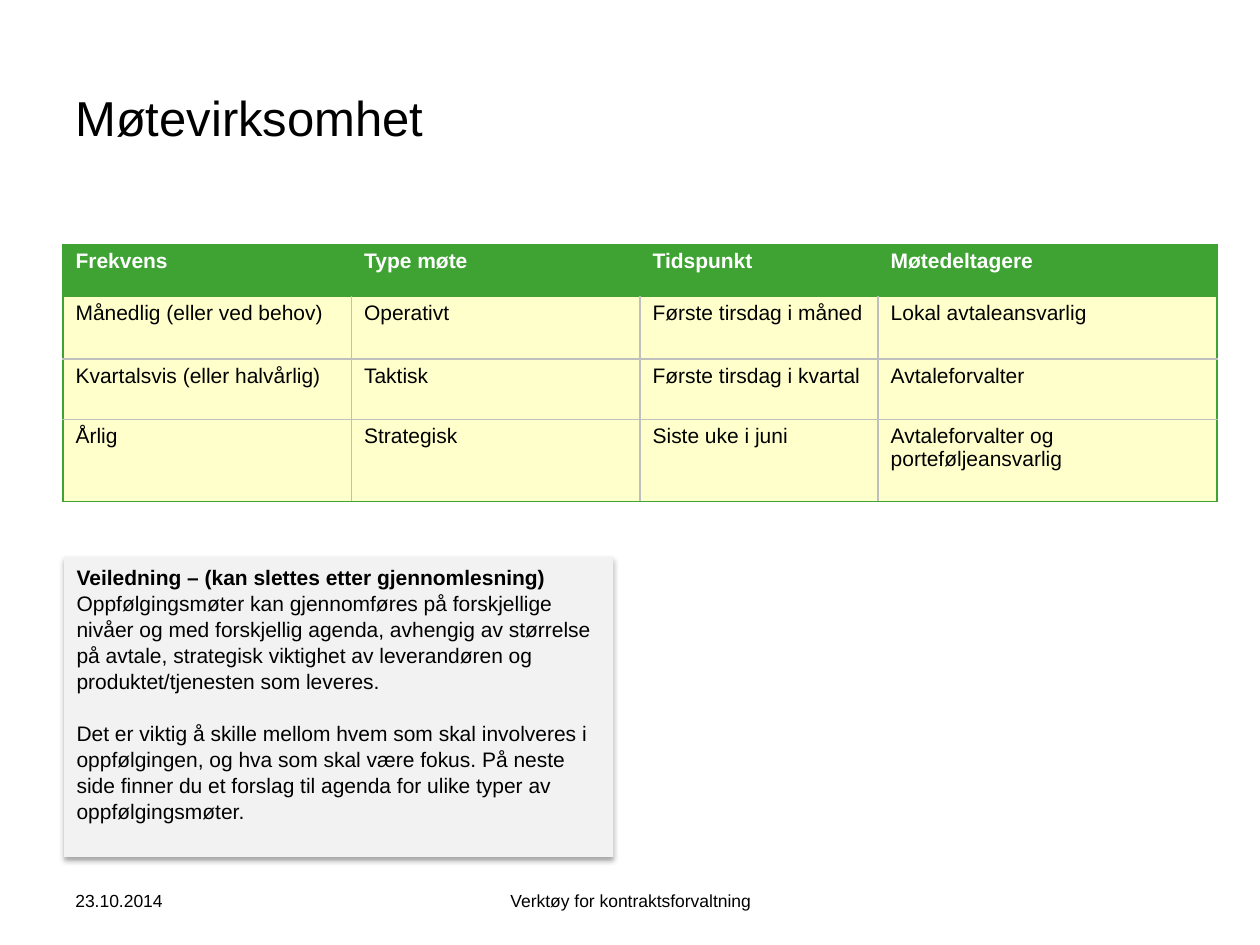
from lxml import etree
from pptx import Presentation
from pptx.dml.color import RGBColor
from pptx.enum.shapes import MSO_SHAPE
from pptx.enum.text import MSO_ANCHOR, PP_ALIGN
from pptx.oxml.ns import qn
from pptx.util import Inches, Pt

RECTANGLE = MSO_SHAPE.RECTANGLE
TOP, MIDDLE = MSO_ANCHOR.TOP, MSO_ANCHOR.MIDDLE
LEFT, CENTER = PP_ALIGN.LEFT, PP_ALIGN.CENTER

COLORS = {
    "text": "000000",
    "header_text": "FFFFFF",
    "green": "3EA333",
    "cream": "FFFFCC",
    "grid": "BFBFBF",
    "panel": "F2F2F2",
}
COLUMNS, ROWS = 10, 7.5
MEETINGS = [
    ["Frekvens", "Type møte", "Tidspunkt", "Møtedeltagere"],
    ["Månedlig (eller ved behov)", "Operativt", "Første tirsdag i måned", "Lokal avtaleansvarlig"],
    ["Kvartalsvis (eller halvårlig)", "Taktisk", "Første tirsdag i kvartal", "Avtaleforvalter"],
    ["Årlig", "Strategisk", "Siste uke i juni", "Avtaleforvalter og porteføljeansvarlig"],
]
GUIDANCE = [
    ("Veiledning – (kan slettes etter gjennomlesning)", {"bold": True}),
    ("Oppfølgingsmøter kan gjennomføres på forskjellige nivåer og med forskjellig agenda, "
     "avhengig av størrelse på avtale, strategisk viktighet av leverandøren og "
     "produktet/tjenesten som leveres.", {}),
    ("Det er viktig å skille mellom hvem som skal involveres i oppfølgingen, og hva som skal "
     "være fokus. På neste side finner du et forslag til agenda for ulike typer av "
     "oppfølgingsmøter.", {"before": 14.4}),
]


def rgb(name):
    return RGBColor.from_string(COLORS[name])


def write(para, text, size=12, color="text", bold=False, align=LEFT, before=0, spacing=1):
    para.alignment = align
    para.space_before = Pt(before)
    para.line_spacing = spacing
    span = para.add_run()
    span.text = text
    span.font.name = "Arial"
    span.font.size = Pt(size)
    span.font.bold = bold
    span.font.color.rgb = rgb(color)


def add_color(parent, name):
    return etree.SubElement(parent, qn("a:srgbClr"), val=COLORS[name])


def add_border(cell, side, name, width):
    line = etree.Element(qn(f"a:ln{side}"), w=str(Pt(width)))
    add_color(etree.SubElement(line, qn("a:solidFill")), name)
    return line


class SlideBuilder:
    def __init__(self, deck):
        self.column = deck.slide_width / COLUMNS
        self.row = deck.slide_height / ROWS
        self.page = deck.slides.add_slide(deck.slide_layouts[6])

    def place(self, left, top, width, height):
        return [round(value * unit) for value, unit in
                zip((left, top, width, height), (self.column, self.row) * 2)]

    def label(self, text, area, **style):
        box = self.page.shapes.add_textbox(*self.place(*area))
        frame = box.text_frame
        frame.word_wrap = True
        frame.vertical_anchor = MIDDLE
        write(frame.paragraphs[0], text, **style)

    def table(self, cells, left, top, widths, heights):
        area = self.place(left, top, sum(widths), sum(heights))
        grid = self.page.shapes.add_table(len(cells), len(widths), *area).table
        grid.horz_banding = False
        for column, width in zip(grid.columns, widths):
            column.width = round(width * self.column)
        for row, height in zip(grid.rows, heights):
            row.height = round(height * self.row)
        last_row, last_column = len(cells) - 1, len(widths) - 1
        for i, values in enumerate(cells):
            header = i == 0
            for j, value in enumerate(values):
                cell = grid.cell(i, j)
                write(cell.text_frame.paragraphs[0], value, bold=header, spacing=0.95,
                      color="header_text" if header else "text")
                cell.fill.solid()
                cell.fill.fore_color.rgb = rgb("green" if header else "cream")
                outer = {"L": j == 0, "R": j == last_column, "T": i <= 1, "B": i == last_row}
                borders = [
                    add_border(cell, side, "green", 0.75) if header or edge
                    else add_border(cell, side, "grid", 1)
                    for side, edge in outer.items()
                ]
                properties = cell._tc.get_or_add_tcPr()
                for position, border in enumerate(borders):
                    properties.insert(position, border)

    def panel(self, paragraphs, area):
        box = self.page.shapes.add_shape(RECTANGLE, *self.place(*area))
        box.fill.solid()
        box.fill.fore_color.rgb = rgb("panel")
        box.line.fill.background()
        box.shadow.inherit = False
        effects = box._element.spPr.find(qn("a:effectLst"))
        shadow = etree.SubElement(effects, qn("a:outerShdw"), blurRad=str(Pt(3.1)),
                                  dist=str(Pt(1.8)), dir="5400000", rotWithShape="0")
        etree.SubElement(add_color(shadow, "text"), qn("a:alpha"), val="35000")
        frame = box.text_frame
        frame.word_wrap = True
        frame.vertical_anchor = TOP
        for index, (text, style) in enumerate(paragraphs):
            para = frame.add_paragraph() if index else frame.paragraphs[0]
            write(para, text, spacing=1.04, **style)


def main():
    deck = Presentation()
    deck.slide_width, deck.slide_height = Inches(10), Inches(7.5)
    slide = SlideBuilder(deck)
    slide.label("Møtevirksomhet", (0.5, 0.3, 9, 1.25), size=28)
    slide.table(MEETINGS, 0.5, 1.94, [2.29, 2.29, 1.89, 2.69], [0.41, 0.5, 0.48, 0.65])
    slide.panel(GUIDANCE, (0.51, 4.42, 4.36, 2.38))
    slide.label("23.10.2014", (0.5, 6.95, 2.33, 0.4), size=10)
    slide.label("Verktøy for kontraktsforvaltning", (3.42, 6.95, 3.17, 0.4),
                size=10, align=CENTER)
    deck.save("out.pptx")


if __name__ == "__main__":
    main()
